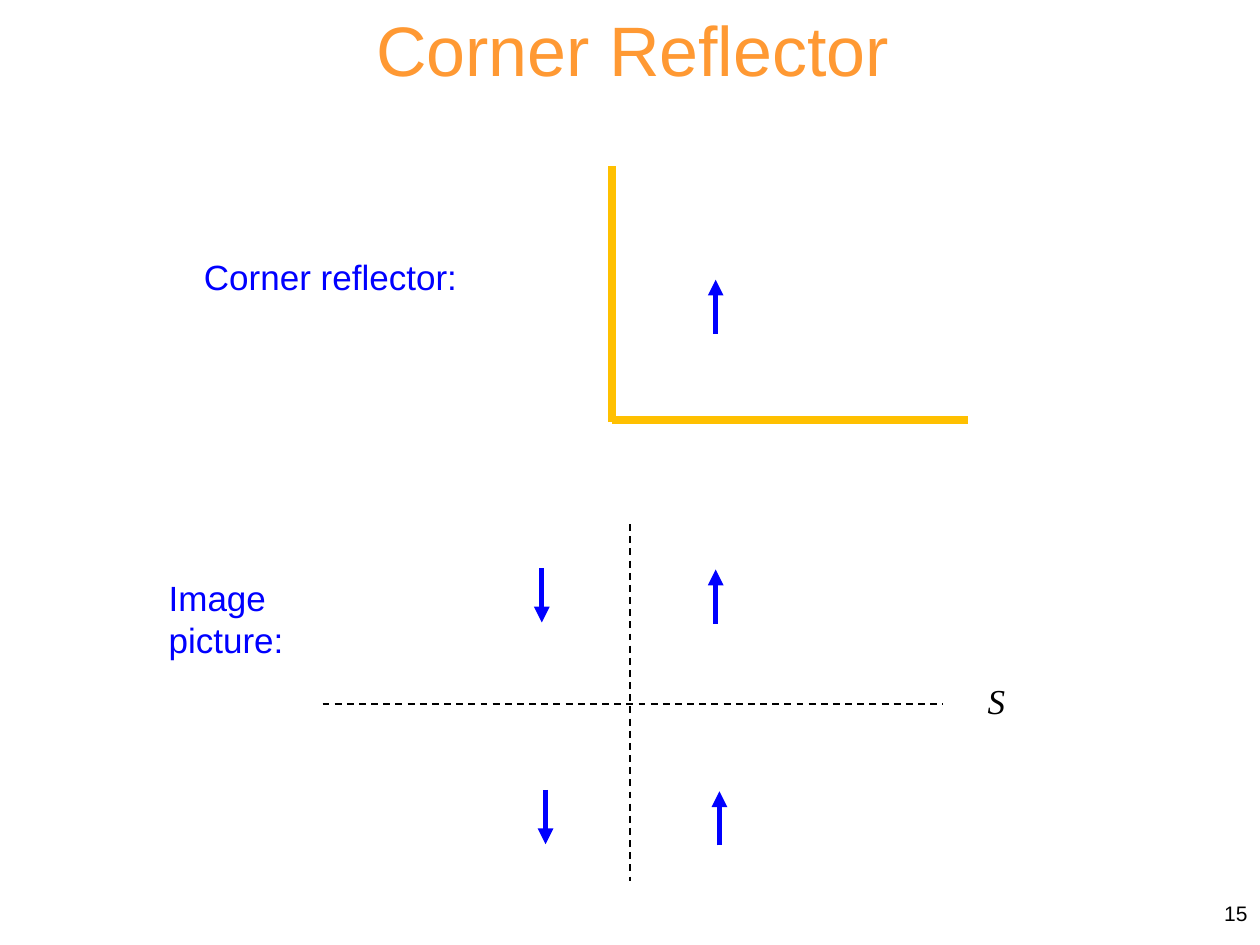
from dataclasses import dataclass

from pptx import Presentation
from pptx.dml.color import RGBColor
from pptx.enum.dml import MSO_LINE_DASH_STYLE as DASH
from pptx.enum.shapes import MSO_CONNECTOR
from pptx.enum.text import MSO_ANCHOR, MSO_AUTO_SIZE, PP_ALIGN
from pptx.oxml.ns import qn
from pptx.util import Inches, Pt
from lxml.etree import SubElement

BLUE, GOLD, ORANGE, BLACK = "0000FF", "FFC000", "FF9933", "000000"
CURRENT_LENGTH = 0.43


@dataclass
class Label:
    text: str
    left: float
    top: float
    width: float
    height: float
    size: float
    color: str
    font: str = "Arial"
    italic: bool = False
    align: PP_ALIGN = PP_ALIGN.LEFT
    anchor: MSO_ANCHOR = MSO_ANCHOR.TOP
    wrap: bool = True
    grow: bool = True
    right_inset: float = 0.1


@dataclass
class Line:
    x1: float
    y1: float
    x2: float
    y2: float
    color: str
    width: float
    dashed: bool = False
    arrow: bool = False


def rgb(color: str) -> RGBColor:
    return RGBColor.from_string(color)


def current(x: float, top: float, up: bool) -> Line:
    bottom = top + CURRENT_LENGTH
    start, end = (bottom, top) if up else (top, bottom)
    return Line(x, start, x, end, BLUE, 3, arrow=True)


def draw_label(slide, label: Label) -> None:
    sp = slide.shapes.add_textbox(Inches(label.left), Inches(label.top),
                                  Inches(label.width), Inches(label.height))
    tf = sp.text_frame
    tf.word_wrap = label.wrap
    tf.auto_size = MSO_AUTO_SIZE.SHAPE_TO_FIT_TEXT if label.grow else MSO_AUTO_SIZE.NONE
    tf.vertical_anchor = label.anchor
    tf.margin_right = Inches(label.right_inset)
    tf.text = label.text
    p = tf.paragraphs[0]
    p.alignment = label.align
    font = p.runs[0].font
    font.name = label.font
    font.size = Pt(label.size)
    font.italic = label.italic
    font.color.rgb = rgb(label.color)


def draw_line(slide, line: Line) -> None:
    cxn = slide.shapes.add_connector(MSO_CONNECTOR.STRAIGHT,
                                     Inches(line.x1), Inches(line.y1),
                                     Inches(line.x2), Inches(line.y2))
    cxn.line.color.rgb = rgb(line.color)
    cxn.line.width = Pt(line.width)
    if line.dashed:
        cxn.line.dash_style = DASH.DASH
    if line.arrow:
        SubElement(cxn.line._get_or_add_ln(), qn("a:tailEnd"), type="triangle")
    SubElement(cxn._element.spPr, qn("a:effectLst"))


LINES = [
    Line(2.56, 5.59, 7.48, 5.59, BLACK, 1, dashed=True),
    Line(5, 4.16, 5, 6.99, BLACK, 1, dashed=True),
    current(5.68, 4.52, up=True),
    current(5.71, 6.28, up=True),
    current(4.3, 4.51, up=False),
    current(4.33, 6.27, up=False),
    current(5.68, 2.22, up=True),
    Line(4.86, 3.33, 7.68, 3.33, GOLD, 4.5),
    Line(4.86, 3.35, 4.86, 1.32, GOLD, 4.5),
]

LABELS = [
    Label("Corner Reflector", 2.13, 0, 5.78, 0.77, 40, ORANGE, align=PP_ALIGN.CENTER),
    Label("S", 7.74, 5.34, 0.41, 0.43, 20, BLACK, "Times New Roman", italic=True, wrap=False),
    Label("Corner reflector:", 1.52, 1.98, 2.22, 0.44, 20, BLUE, wrap=False),
    Label("Image picture:", 1.24, 4.53, 1.96, 0.43, 20, BLUE, right_inset=0.4),
    Label("15", 7.92, 7, 2.08, 0.5, 12, BLACK, align=PP_ALIGN.RIGHT,
          anchor=MSO_ANCHOR.MIDDLE, grow=False),
]


def main() -> None:
    prs = Presentation()
    prs.slide_width, prs.slide_height = Inches(10), Inches(7.5)
    slide = prs.slides.add_slide(prs.slide_layouts[6])
    for line in LINES:
        draw_line(slide, line)
    for label in LABELS:
        draw_label(slide, label)
    prs.save("out.pptx")


if __name__ == "__main__":
    main()
